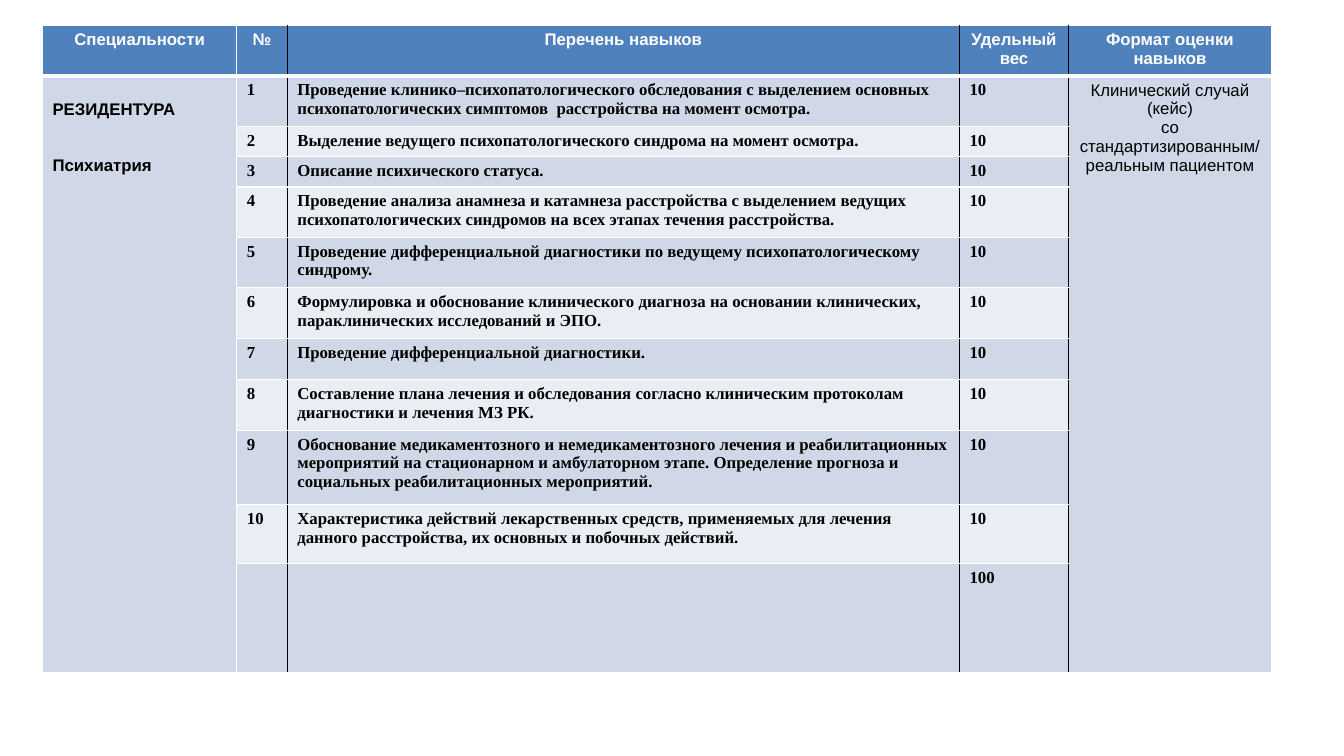
from lxml.etree import SubElement
from pptx import Presentation
from pptx.dml.color import RGBColor
from pptx.enum.text import PP_ALIGN
from pptx.oxml.ns import qn
from pptx.util import Cm, Pt

WHITE = RGBColor(0xFF, 0xFF, 0xFF)
BLACK = RGBColor(0, 0, 0)
HEADER_BLUE = RGBColor(0x4F, 0x81, 0xBD)
DARK_BAND = RGBColor(0xD0, 0xD8, 0xE8)
LIGHT_BAND = RGBColor(0xE9, 0xED, 0xF4)

COLUMN_WIDTHS = [4.9, 1.27, 16.94, 2.75, 5.11]
ROW_HEIGHTS = [1.27, 1.27, 0.77, 0.76, 1.27, 1.27, 1.27, 1.05, 1.27, 1.88, 1.47, 2.77]
EDGE_COLORS = [WHITE, WHITE, BLACK, BLACK, BLACK, WHITE]

HEADERS = ["Специальности", "№", "Перечень навыков", "Удельный вес", "Формат оценки навыков"]
SKILLS = [
    "Проведение клинико–психопатологического обследования с выделением основных "
    "психопатологических симптомов  расстройства на момент осмотра.",
    "Выделение ведущего психопатологического синдрома на момент осмотра.",
    "Описание психического статуса.",
    "Проведение анализа анамнеза и катамнеза расстройства с выделением ведущих "
    "психопатологических синдромов на всех этапах течения расстройства.",
    "Проведение дифференциальной диагностики по ведущему психопатологическому синдрому.",
    "Формулировка и обоснование клинического диагноза на основании клинических, "
    "параклинических исследований и ЭПО.",
    "Проведение дифференциальной диагностики.",
    "Составление плана лечения и обследования согласно клиническим протоколам "
    "диагностики и лечения МЗ РК.",
    "Обоснование медикаментозного и немедикаментозного лечения и реабилитационных "
    "мероприятий на стационарном и амбулаторном этапе. Определение прогноза и "
    "социальных реабилитационных мероприятий.",
    "Характеристика действий лекарственных средств, применяемых для лечения "
    "данного расстройства, их основных и побочных действий.",
]
SKILL_WEIGHT = 10
SPECIALTY = "РЕЗИДЕНТУРА\nПсихиатрия"
ASSESSMENT = "Клинический случай (кейс)\nсо стандартизированным/\nреальным пациентом"


def draw_border(cell, side, color, points):
    line = SubElement(cell._tc.get_or_add_tcPr(), qn(f"a:ln{side}"), w=str(Pt(points)))
    fill = SubElement(line, qn("a:solidFill"))
    SubElement(fill, qn("a:srgbClr"), val=str(color))


def style_cell(cell, row, column):
    draw_border(cell, "L", EDGE_COLORS[column], 1)
    draw_border(cell, "R", EDGE_COLORS[column + 1], 1)
    draw_border(cell, "T", WHITE, 3 if row == 1 else 1)
    draw_border(cell, "B", WHITE, 3 if row == 0 else 1)
    outer = column in (0, len(HEADERS) - 1)
    if row == 0:
        color = HEADER_BLUE
    else:
        color = DARK_BAND if outer or row % 2 or row > len(SKILLS) else LIGHT_BAND
    cell.fill.solid()
    cell.fill.fore_color.rgb = color


def write_cell(cell, text, font="Times New Roman", bold=True, color=BLACK, align=PP_ALIGN.LEFT):
    cell.text_frame.text = text
    for paragraph in cell.text_frame.paragraphs:
        paragraph.alignment = align
        paragraph.font.size = Pt(12)
        for span in paragraph.runs:
            span.font.name = font
            span.font.size = Pt(12)
            span.font.bold = bold
            span.font.color.rgb = color


def add_grid(page):
    frame = page.shapes.add_table(
        len(ROW_HEIGHTS), len(COLUMN_WIDTHS), Cm(1.07), Cm(0.64),
        Cm(sum(COLUMN_WIDTHS)), Cm(sum(ROW_HEIGHTS)))
    table = frame.table
    table.first_row = False
    table.horz_banding = False
    for column, width in zip(table.columns, COLUMN_WIDTHS):
        column.width = Cm(width)
    for row, height in zip(table.rows, ROW_HEIGHTS):
        row.height = Cm(height)
    for row in range(len(ROW_HEIGHTS)):
        for column in range(len(COLUMN_WIDTHS)):
            style_cell(table.cell(row, column), row, column)
    return table


def merge_body(table, column):
    cell = table.cell(1, column)
    cell.merge(table.cell(len(ROW_HEIGHTS) - 1, column))
    return cell


def fill_skills(table):
    rows = [(str(number), skill, str(SKILL_WEIGHT)) for number, skill in enumerate(SKILLS, 1)]
    rows.append(("", "", str(SKILL_WEIGHT * len(SKILLS))))
    for row, values in enumerate(rows, 1):
        for column, text in enumerate(values, 1):
            write_cell(table.cell(row, column), text)


def main():
    deck = Presentation()
    deck.slide_width = Cm(33.87)
    deck.slide_height = Cm(19.05)
    page = deck.slides.add_slide(deck.slide_layouts[6])
    table = add_grid(page)
    for column, header in enumerate(HEADERS):
        write_cell(table.cell(0, column), header, "Arial", color=WHITE, align=PP_ALIGN.CENTER)
    fill_skills(table)
    specialty = merge_body(table, 0)
    write_cell(specialty, SPECIALTY, "Arial")
    specialty.margin_top = Cm(0.61)
    specialty.text_frame.paragraphs[1].space_before = Pt(27)
    assessment = merge_body(table, len(HEADERS) - 1)
    write_cell(assessment, ASSESSMENT, "Arial", bold=False, align=PP_ALIGN.CENTER)
    deck.save("out.pptx")


if __name__ == "__main__":
    main()
